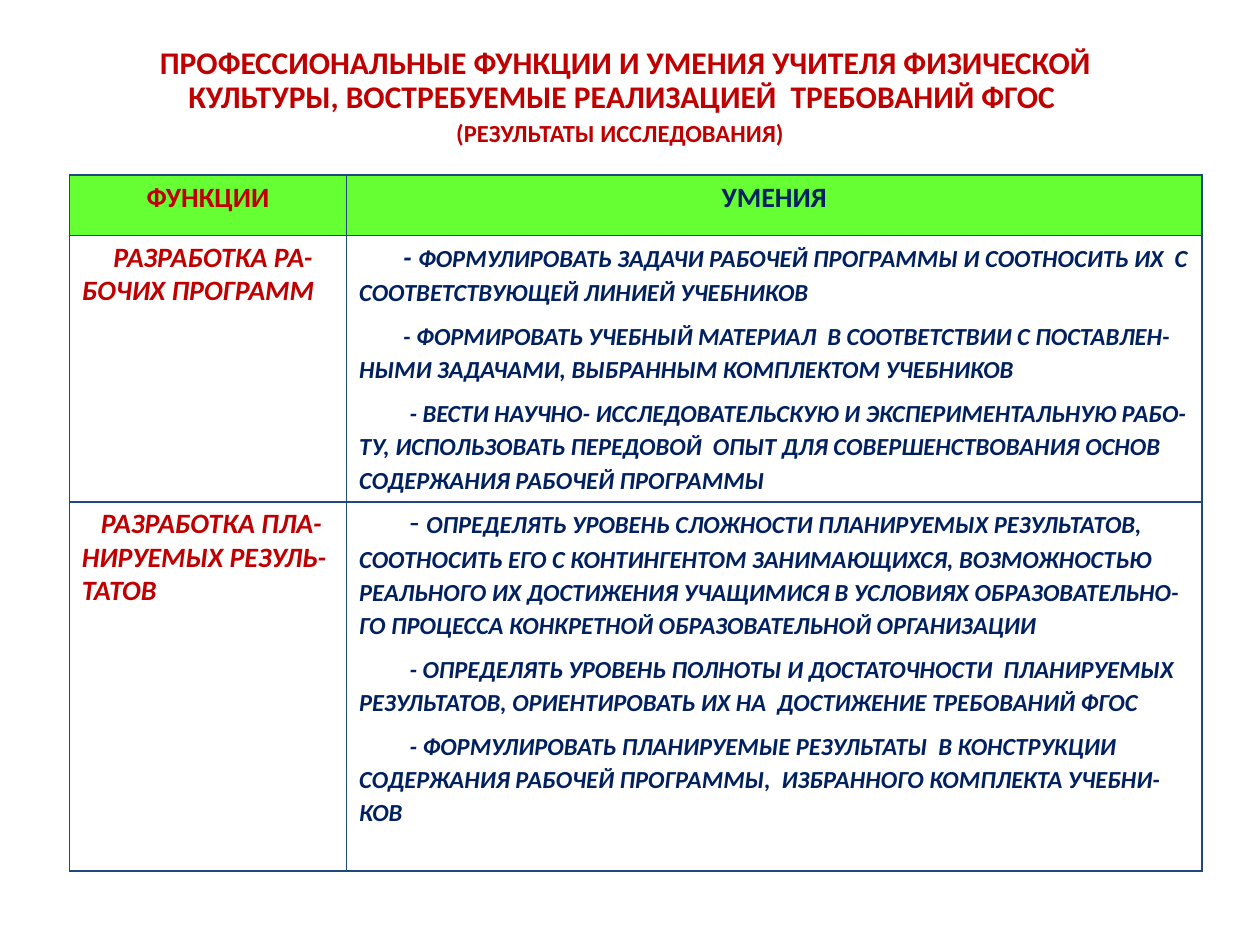
"""Build a slide with a table of a PE teacher's professional functions and skills."""
from lxml.etree import SubElement
from pptx import Presentation
from pptx.dml.color import RGBColor
from pptx.enum.text import MSO_ANCHOR, MSO_AUTO_SIZE, PP_ALIGN
from pptx.oxml.ns import qn
from pptx.util import Inches, Pt

COLORS = {"red": "C00000", "navy": "002060", "border": "1F497D", "header": "66FF33"}


def add_run(p, text, size, color, bold=True, italic=False):
    r = p.add_run()
    r.text = text
    r.font.name = "Calibri"
    r.font.size = Pt(size)
    r.font.bold = bold
    r.font.italic = italic
    r.font.color.rgb = RGBColor.from_string(COLORS[color])


def format_paragraph(p, align=PP_ALIGN.LEFT, indent=0, before=0):
    p.alignment = align
    p.line_spacing = Pt(19)
    p.space_before = Pt(before)
    pPr = p._p.get_or_add_pPr()
    pPr.set("marL", "0")
    pPr.set("indent", str(Inches(indent)))


prs = Presentation()
prs.slide_width = Inches(10)
prs.slide_height = Inches(7.5)
s = prs.slides.add_slide(prs.slide_layouts[5])

title = s.shapes.title
title.left, title.top = Inches(0.55), Inches(0.33)
title.width, title.height = Inches(8.83), Inches(0.9)
tf = title.text_frame
tf.word_wrap = True
tf.auto_size = MSO_AUTO_SIZE.SHAPE_TO_FIT_TEXT
tf.vertical_anchor = MSO_ANCHOR.TOP
title_lines = [
    ("ПРОФЕССИОНАЛЬНЫЕ ФУНКЦИИ И УМЕНИЯ УЧИТЕЛЯ ФИЗИЧЕСКОЙ КУЛЬТУРЫ, "
     "ВОСТРЕБУЕМЫЕ РЕАЛИЗАЦИЕЙ  ТРЕБОВАНИЙ ФГОС ", 18),
    ("(РЕЗУЛЬТАТЫ ИССЛЕДОВАНИЯ)  ", 14),
]
for i, (text, size) in enumerate(title_lines):
    p = tf.paragraphs[0] if i == 0 else tf.add_paragraph()
    format_paragraph(p, PP_ALIGN.CENTER)
    add_run(p, text, size, "red")

rows = [
    ("РАЗРАБОТКА РА-БОЧИХ ПРОГРАММ", 0.25, 16, True, [
        ("ФОРМУЛИРОВАТЬ ЗАДАЧИ РАБОЧЕЙ ПРОГРАММЫ И СООТНОСИТЬ ИХ  С "
         "СООТВЕТСТВУЮЩЕЙ ЛИНИЕЙ УЧЕБНИКОВ", 0.35),
        ("ФОРМИРОВАТЬ УЧЕБНЫЙ МАТЕРИАЛ  В СООТВЕТСТВИИ С ПОСТАВЛЕН-НЫМИ "
         "ЗАДАЧАМИ, ВЫБРАННЫМ КОМПЛЕКТОМ УЧЕБНИКОВ", 0.35),
        ("ВЕСТИ НАУЧНО- ИССЛЕДОВАТЕЛЬСКУЮ И ЭКСПЕРИМЕНТАЛЬНУЮ РАБО-ТУ, "
         "ИСПОЛЬЗОВАТЬ ПЕРЕДОВОЙ  ОПЫТ ДЛЯ СОВЕРШЕНСТВОВАНИЯ ОСНОВ "
         "СОДЕРЖАНИЯ РАБОЧЕЙ ПРОГРАММЫ", 0.4),
    ]),
    ("РАЗРАБОТКА ПЛА-НИРУЕМЫХ РЕЗУЛЬ-ТАТОВ", 0.15, 18, False, [
        ("ОПРЕДЕЛЯТЬ УРОВЕНЬ СЛОЖНОСТИ ПЛАНИРУЕМЫХ РЕЗУЛЬТАТОВ, СООТНОСИТЬ "
         "ЕГО С КОНТИНГЕНТОМ ЗАНИМАЮЩИХСЯ, ВОЗМОЖНОСТЬЮ РЕАЛЬНОГО ИХ ДОСТИЖЕНИЯ "
         "УЧАЩИМИСЯ В УСЛОВИЯХ ОБРАЗОВАТЕЛЬНО-ГО ПРОЦЕССА КОНКРЕТНОЙ "
         "ОБРАЗОВАТЕЛЬНОЙ ОРГАНИЗАЦИИ", 0.4),
        ("ОПРЕДЕЛЯТЬ УРОВЕНЬ ПОЛНОТЫ И ДОСТАТОЧНОСТИ  ПЛАНИРУЕМЫХ РЕЗУЛЬТАТОВ, "
         "ОРИЕНТИРОВАТЬ ИХ НА  ДОСТИЖЕНИЕ ТРЕБОВАНИЙ ФГОС", 0.4),
        ("ФОРМУЛИРОВАТЬ ПЛАНИРУЕМЫЕ РЕЗУЛЬТАТЫ  В КОНСТРУКЦИИ СОДЕРЖАНИЯ "
         "РАБОЧЕЙ ПРОГРАММЫ,  ИЗБРАННОГО КОМПЛЕКТА УЧЕБНИ-КОВ", 0.4),
    ]),
]

table = s.shapes.add_table(
    3, 2, Inches(0.55), Inches(1.39), Inches(8.99), Inches(5.51)).table
table.first_row = True
table.horz_banding = False
for column, width in zip(table.columns, (2.2, 6.79)):
    column.width = Inches(width)
for row, height in zip(table.rows, (0.48, 2.1, 2.93)):
    row.height = Inches(height)

for cell in table.iter_cells():
    tcPr = cell._tc.get_or_add_tcPr()
    for side in ("lnL", "lnR", "lnT", "lnB"):
        ln = SubElement(tcPr, qn(f"a:{side}"), w=str(Pt(1)))
        fill = SubElement(ln, qn("a:solidFill"))
        SubElement(fill, qn("a:srgbClr"), val=COLORS["border"])
    cell.fill.background()

for c, (text, color) in enumerate([("ФУНКЦИИ", "red"), ("УМЕНИЯ", "navy")]):
    cell = table.cell(0, c)
    cell.fill.solid()
    cell.fill.fore_color.rgb = RGBColor.from_string(COLORS["header"])
    p = cell.text_frame.paragraphs[0]
    format_paragraph(p, PP_ALIGN.CENTER)
    add_run(p, text, 16, color)

for r, (function, indent, dash_size, dash_bold, skills) in enumerate(rows, 1):
    p = table.cell(r, 0).text_frame.paragraphs[0]
    format_paragraph(p, indent=indent)
    add_run(p, function, 16, "red", italic=True)

    tf = table.cell(r, 1).text_frame
    for i, (skill, skill_indent) in enumerate(skills):
        p = tf.paragraphs[0] if i == 0 else tf.add_paragraph()
        format_paragraph(p, indent=skill_indent, before=6 if i else 0)
        if i == 0:
            add_run(p, "- ", dash_size, "navy", dash_bold, dash_bold)
        else:
            add_run(p, "- ", 14, "navy", italic=True)
        add_run(p, skill, 14, "navy", italic=True)

prs.save("out.pptx")
